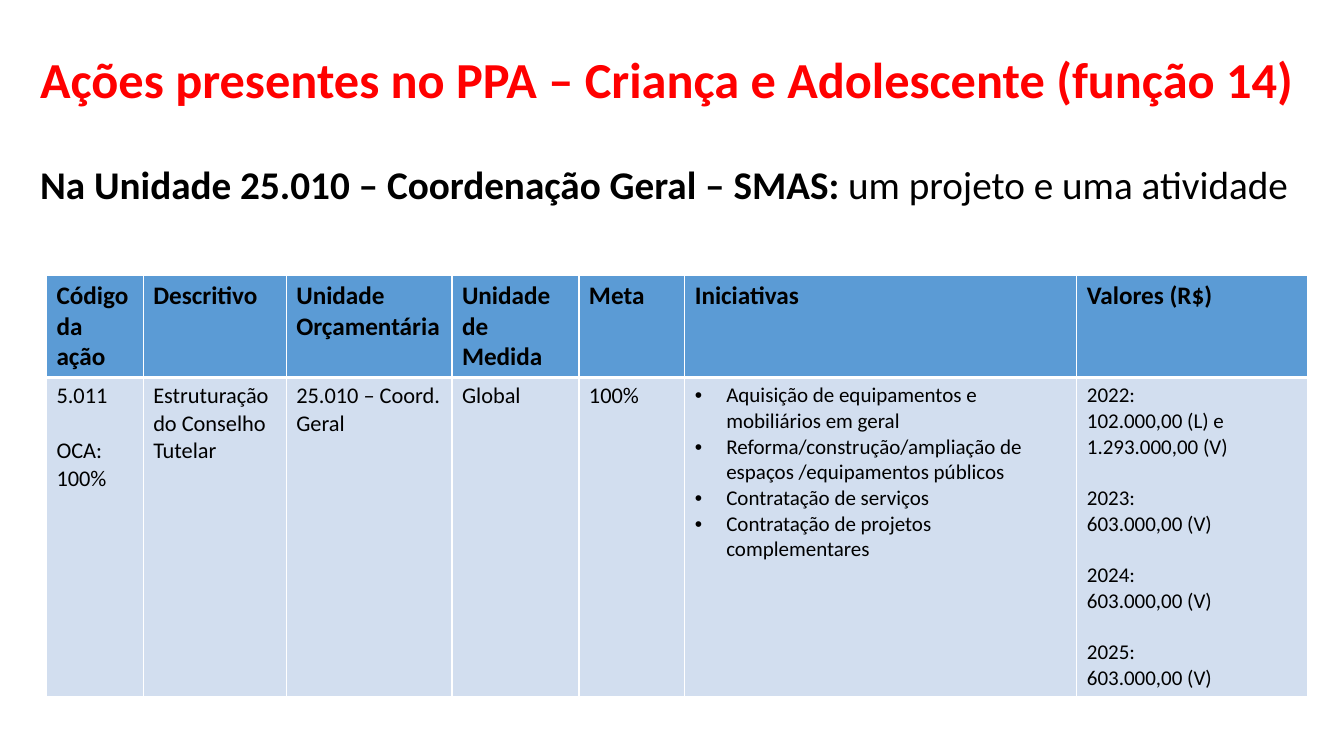
from dataclasses import dataclass

from lxml.etree import SubElement
from pptx import Presentation
from pptx.dml.color import RGBColor
from pptx.enum.text import MSO_ANCHOR as Anchor, MSO_AUTO_SIZE as AutoSize
from pptx.oxml import parse_xml
from pptx.oxml.ns import nsdecls, qn
from pptx.util import Pt

FONT = "Calibri"
COLORS = {
    "title": "FF0000",
    "text": "000000",
    "header": "5B9BD5",
    "body": "D2DEEF",
    "border": "FFFFFF",
}
BULLET_INDENT = 22.5
LINE_PITCH = 1.22


@dataclass
class Run:
    text: str
    size: float
    bold: bool = False
    color: str = "text"


@dataclass
class TextBox:
    left: float
    top: float
    width: float
    height: float
    runs: list[Run]
    anchor: Anchor = Anchor.TOP
    wrap: bool = True
    spacing: float = 1.0


@dataclass
class Column:
    width: float
    header: str
    groups: list[list[str]]  # groups are set one line apart
    size: float = 16
    bullets: bool = False


TEXT_BOXES = [
    TextBox(21.6, 25.9, 947.5, 66.2,
            [Run("Ações presentes no PPA – Criança e Adolescente (função 14)",
                 36, True, "title")],
            anchor=Anchor.MIDDLE, spacing=0.9),
    TextBox(21.6, 110.9, 925.2, 41,
            [Run("Na Unidade 25.010 – Coordenação Geral – SMAS: ", 28, True),
             Run("um projeto e uma atividade", 28)],
            wrap=False),
]

TABLE_LEFT, TABLE_TOP = 33.2, 196.7
ROW_HEIGHTS = (73, 228)
COLUMNS = [
    Column(69.1, "Código da ação", [["5.011"], ["OCA: 100%"]]),
    Column(102.2, "Descritivo", [["Estruturação do Conselho Tutelar"]]),
    Column(118.4, "Unidade Orçamentária", [["25.010 – Coord. Geral"]]),
    Column(90.7, "Unidade de Medida", [["Global"]]),
    Column(75.6, "Meta", [["100%"]]),
    Column(280.1, "Iniciativas", [[
        "Aquisição de equipamentos e mobiliários em geral",
        "Reforma/construção/ampliação de espaços /equipamentos públicos",
        "Contratação de serviços",
        "Contratação de projetos complementares",
    ]], size=15, bullets=True),
    Column(164.9, "Valores (R$)", [
        ["2022:", "102.000,00 (L) e 1.293.000,00 (V)"],
        ["2023:", "603.000,00 (V)"],
        ["2024:", "603.000,00 (V)"],
        ["2025:", "603.000,00 (V)"],
    ], size=15),
]


def rgb(name: str) -> RGBColor:
    return RGBColor.from_string(COLORS[name])


def format_run(r, style: Run) -> None:
    r.font.name = FONT
    r.font.size = Pt(style.size)
    r.font.bold = style.bold
    r.font.color.rgb = rgb(style.color)


def add_text_box(s, box: TextBox) -> None:
    sp = s.shapes.add_textbox(Pt(box.left), Pt(box.top), Pt(box.width), Pt(box.height))
    tf = sp.text_frame
    tf.word_wrap = box.wrap
    tf.auto_size = AutoSize.NONE if box.wrap else AutoSize.SHAPE_TO_FIT_TEXT
    tf.vertical_anchor = box.anchor
    p = tf.paragraphs[0]
    p.line_spacing = box.spacing
    for style in box.runs:
        r = p.add_run()
        r.text = style.text
        format_run(r, style)


def add_bullet(p) -> None:
    pPr = p._p.get_or_add_pPr()
    pPr.set("marL", str(Pt(BULLET_INDENT)))
    pPr.set("indent", str(-Pt(BULLET_INDENT)))
    SubElement(pPr, qn("a:buFont")).set("typeface", "Arial")
    SubElement(pPr, qn("a:buChar")).set("char", "•")


def style_cell(cell, fill: str, top: float, bottom: float) -> None:
    cell.fill.solid()
    cell.fill.fore_color.rgb = rgb(fill)
    tcPr = cell._tc.get_or_add_tcPr()
    sides = {"lnL": 1, "lnR": 1, "lnT": top, "lnB": bottom}
    for i, (side, width) in enumerate(sides.items()):
        tcPr.insert(i, parse_xml(
            f'<a:{side} {nsdecls("a")} w="{Pt(width)}"><a:solidFill>'
            f'<a:srgbClr val="{COLORS["border"]}"/></a:solidFill></a:{side}>'))


def fill_header(cell, col: Column) -> None:
    cell.text_frame.text = col.header
    format_run(cell.text_frame.paragraphs[0].runs[0], Run(col.header, 18, True))
    style_cell(cell, "header", top=1, bottom=3)


def fill_body(cell, col: Column) -> None:
    tf = cell.text_frame
    tf.text = "\n".join(line for group in col.groups for line in group)
    paragraphs = iter(tf.paragraphs)
    for g, group in enumerate(col.groups):
        for i, line in enumerate(group):
            p = next(paragraphs)
            if g > 0 and i == 0:
                p.space_before = Pt(round(col.size * LINE_PITCH, 1))
            if col.bullets:
                add_bullet(p)
            format_run(p.runs[0], Run(line, col.size))
    style_cell(cell, "body", top=3, bottom=1)


def add_actions_table(s) -> None:
    width = sum(col.width for col in COLUMNS)
    table = s.shapes.add_table(
        len(ROW_HEIGHTS), len(COLUMNS), Pt(TABLE_LEFT), Pt(TABLE_TOP),
        Pt(width), Pt(sum(ROW_HEIGHTS))).table
    table.horz_banding = False
    for row, height in zip(table.rows, ROW_HEIGHTS):
        row.height = Pt(height)
    for c, col in enumerate(COLUMNS):
        table.columns[c].width = Pt(col.width)
        fill_header(table.cell(0, c), col)
        fill_body(table.cell(1, c), col)


def main() -> None:
    prs = Presentation()
    prs.slide_width, prs.slide_height = Pt(960), Pt(540)
    s = prs.slides.add_slide(prs.slide_layouts[6])

    # Title and subtitle
    for box in TEXT_BOXES:
        add_text_box(s, box)

    # Table of actions
    add_actions_table(s)

    prs.save("out.pptx")


if __name__ == "__main__":
    main()
